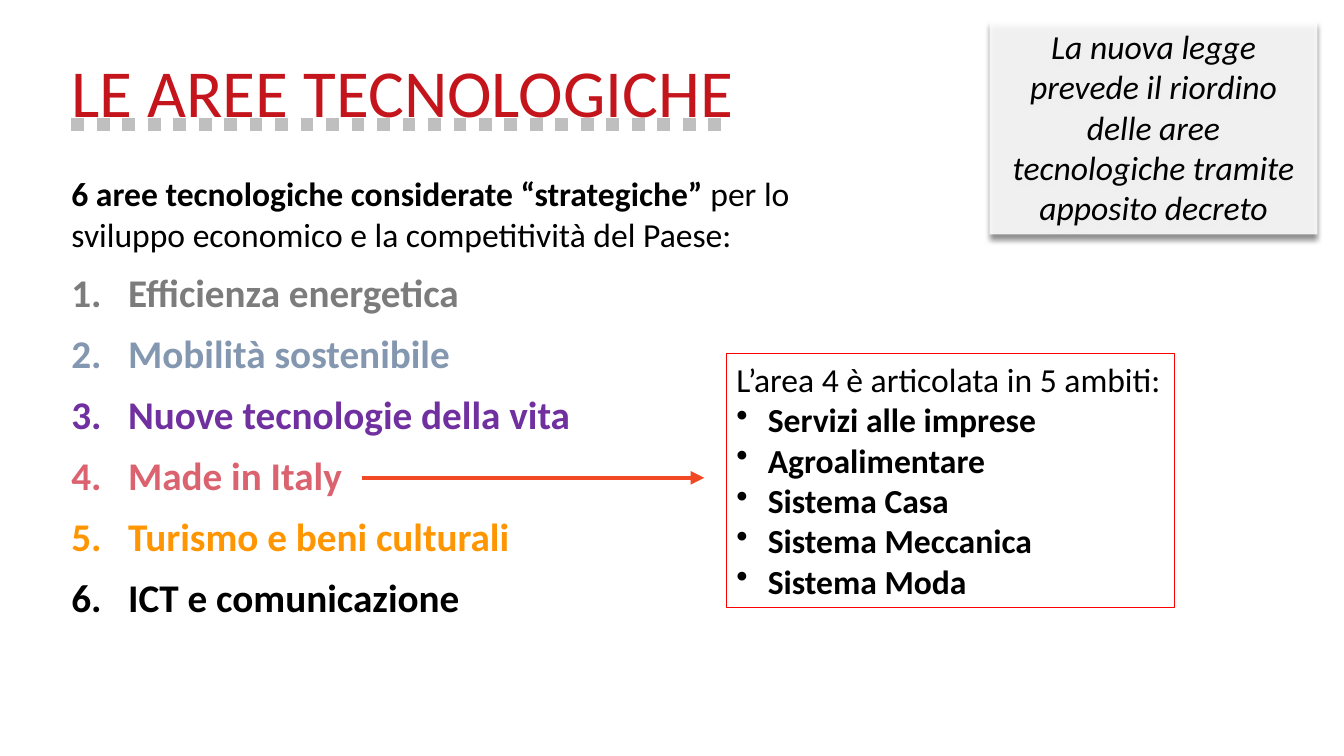
"""Build the slide on the six technology areas."""
from dataclasses import dataclass, field
from typing import Any

from lxml.etree import SubElement
from pptx import Presentation
from pptx.dml.color import RGBColor
from pptx.enum.shapes import MSO_CONNECTOR, MSO_SHAPE
from pptx.enum.text import MSO_ANCHOR, MSO_AUTO_SIZE, MSO_UNDERLINE, PP_ALIGN
from pptx.oxml import parse_xml
from pptx.oxml.ns import nsdecls, qn
from pptx.util import Cm, Pt

FONT = "Calibri"
BLACK = RGBColor(0x00, 0x00, 0x00)
WHITE = RGBColor(0xFF, 0xFF, 0xFF)
GREY = RGBColor(0x7C, 0x7C, 0x7C)
BLUE = RGBColor(0x84, 0x97, 0xB0)
PURPLE = RGBColor(0x70, 0x30, 0xA0)
ROSE = RGBColor(0xDB, 0x63, 0x70)
AMBER = RGBColor(0xFF, 0x95, 0x00)
RED = RGBColor(0xFF, 0x00, 0x00)
CRIMSON = RGBColor(0xC4, 0x15, 0x1C)
ORANGE = RGBColor(0xF0, 0x49, 0x23)

NUMBER = '<a:buAutoNum %s type="arabicPeriod"/>' % nsdecls("a")
DOT = '<a:buChar %s char="•"/>' % nsdecls("a")
DOTTED = ('<a:uFill %s><a:solidFill><a:srgbClr val="BFBFBF"/></a:solidFill></a:uFill>'
          % nsdecls("a"))
SHADOW = ('<a:effectLst %s><a:outerShdw blurRad="50800" dist="50800" dir="5400000" '
          'rotWithShape="0"><a:srgbClr val="000000"><a:alpha val="49000"/></a:srgbClr>'
          '</a:outerShdw></a:effectLst>' % nsdecls("a"))


@dataclass
class Span:
    text: str
    size: int = 24
    color: RGBColor = BLACK
    bold: bool = False
    style: dict[str, Any] = field(default_factory=dict)


@dataclass
class Para:
    spans: list[Span]
    left: float = 0
    hang: float = 0
    mark: str = ""
    style: dict[str, Any] = field(default_factory=dict)


@dataclass
class Panel:
    box: tuple[float, float, float, float]
    alpha: int
    line: RGBColor | None
    paras: list[Para]


def apply(target: Any, style: dict[str, Any]) -> None:
    """Set every format value on the target."""
    for name, value in style.items():
        setattr(target, name, value)


def place(shape: Any, box: tuple[float, float, float, float]) -> None:
    """Move and size a shape in centimetres."""
    apply(shape, dict(zip(("left", "top", "width", "height"), map(Cm, box))))


def write(frame: Any, paras: list[Para], **style: Any) -> None:
    """Fill a text frame with paragraphs."""
    apply(frame, {"word_wrap": True, "auto_size": MSO_AUTO_SIZE.SHAPE_TO_FIT_TEXT,
                  "vertical_anchor": MSO_ANCHOR.TOP} | style)
    for i, item in enumerate(paras):
        para = frame.paragraphs[0] if i == 0 else frame.add_paragraph()
        props = para._p.get_or_add_pPr()
        props.set("marL", str(Cm(item.left)))
        props.set("indent", str(Cm(item.hang)))
        if item.mark:
            props.append(parse_xml(item.mark))
        apply(para, {"alignment": PP_ALIGN.LEFT} | item.style)
        for span in item.spans:
            run = para.add_run()
            run.text = span.text
            apply(run.font, {"name": FONT, "size": Pt(span.size),
                             "bold": span.bold} | span.style)
            run.font.color.rgb = span.color


def draw(slide: Any, panel: Panel) -> Any:
    """Add a translucent white panel with text."""
    shape = slide.shapes.add_shape(MSO_SHAPE.RECTANGLE, *map(Cm, panel.box))
    shape.shadow.inherit = False
    shape.fill.solid()
    shape.fill.fore_color.rgb = WHITE
    tint = shape._element.spPr.find(qn("a:solidFill"))[0]
    SubElement(tint, qn("a:alpha")).set("val", str(panel.alpha * 1000))
    if panel.line is None:
        shape.line.fill.background()
    else:
        shape.line.color.rgb = panel.line
        shape.line.width = Pt(0.75)
    write(shape.text_frame, panel.paras)
    return shape


def point(slide: Any, start: float, end: float, level: float) -> None:
    """Add a level arrow."""
    arrow = slide.shapes.add_connector(
        MSO_CONNECTOR.STRAIGHT, Cm(start), Cm(level), Cm(end), Cm(level))
    arrow.line.color.rgb = ORANGE
    arrow.line.width = Pt(3.25)
    SubElement(arrow.line._get_or_add_ln(), qn("a:tailEnd")).set("type", "triangle")
    SubElement(arrow._element.spPr, qn("a:effectLst"))


AREAS = [("Efficienza energetica", GREY), ("Mobilità sostenibile", BLUE),
         ("Nuove tecnologie della vita", PURPLE), ("Made in Italy", ROSE),
         ("Turismo e beni culturali", AMBER), ("ICT e comunicazione", BLACK)]
FIELDS = ["Servizi alle imprese", "Agroalimentare", "Sistema Casa",
          "Sistema Meccanica", "Sistema Moda"]
INTRO = Para([Span("6 aree tecnologiche\u00a0considerate “strategiche” ", bold=True),
              Span("per lo sviluppo economico e la competitività del Paese:")], left=0.1)
SCOPE = Panel((18.31, 8.92, 11.3, 6.4), 90, RED,
              [Para([Span("L’area 4 è articolata in 5 ambiti:")])]
              + [Para([Span(name, bold=True)], 0.79, -0.79, DOT) for name in FIELDS])
NOTE = Panel((24.94, 0.53, 8.26, 5.38), 87, None,
             [Para([Span("La nuova legge prevede il riordino delle aree tecnologiche "
                         "tramite apposito decreto", style={"italic": True})],
                   style={"alignment": PP_ALIGN.CENTER})])
HEAD = Para([Span("LE AREE TECNOLOGICHE", 48, CRIMSON,
                  style={"underline": MSO_UNDERLINE.DOTTED_HEAVY_LINE})],
            left=1.57, style={"line_spacing": 0.9, "space_before": Pt(0)})
FLUSH = dict.fromkeys(
    ("margin_left", "margin_top", "margin_right", "margin_bottom"), Cm(0))


def main() -> None:
    """Build and save the slide."""
    deck = Presentation()
    deck.slide_width, deck.slide_height = Cm(33.87), Cm(19.05)
    slide = deck.slides.add_slide(deck.slide_layouts[5])

    title = slide.shapes.title
    place(title, (0.23, 0, 25.68, 3.33))
    write(title.text_frame, [HEAD],
          **FLUSH | {"margin_top": Cm(1.47), "vertical_anchor": MSO_ANCHOR.BOTTOM})
    props = title.text_frame.paragraphs[0].runs[0]._r.get_or_add_rPr()
    props.find(qn("a:latin")).addprevious(parse_xml(DOTTED))

    body = slide.shapes.add_textbox(Cm(1.7), Cm(4.37), Cm(18.64), Cm(11.38))
    rows = [Para([Span(name, 28, color, True)], 1.53, -1.43, NUMBER,
                 {"space_before": Pt(10)}) for name, color in AREAS]
    write(body.text_frame, [INTRO] + rows, **FLUSH)

    draw(slide, SCOPE)
    point(slide, 9.12, 17.75, 12.04)
    note = draw(slide, NOTE)
    props = note._element.spPr
    props.replace(props.find(qn("a:effectLst")), parse_xml(SHADOW))
    deck.save("out.pptx")


if __name__ == "__main__":
    main()
